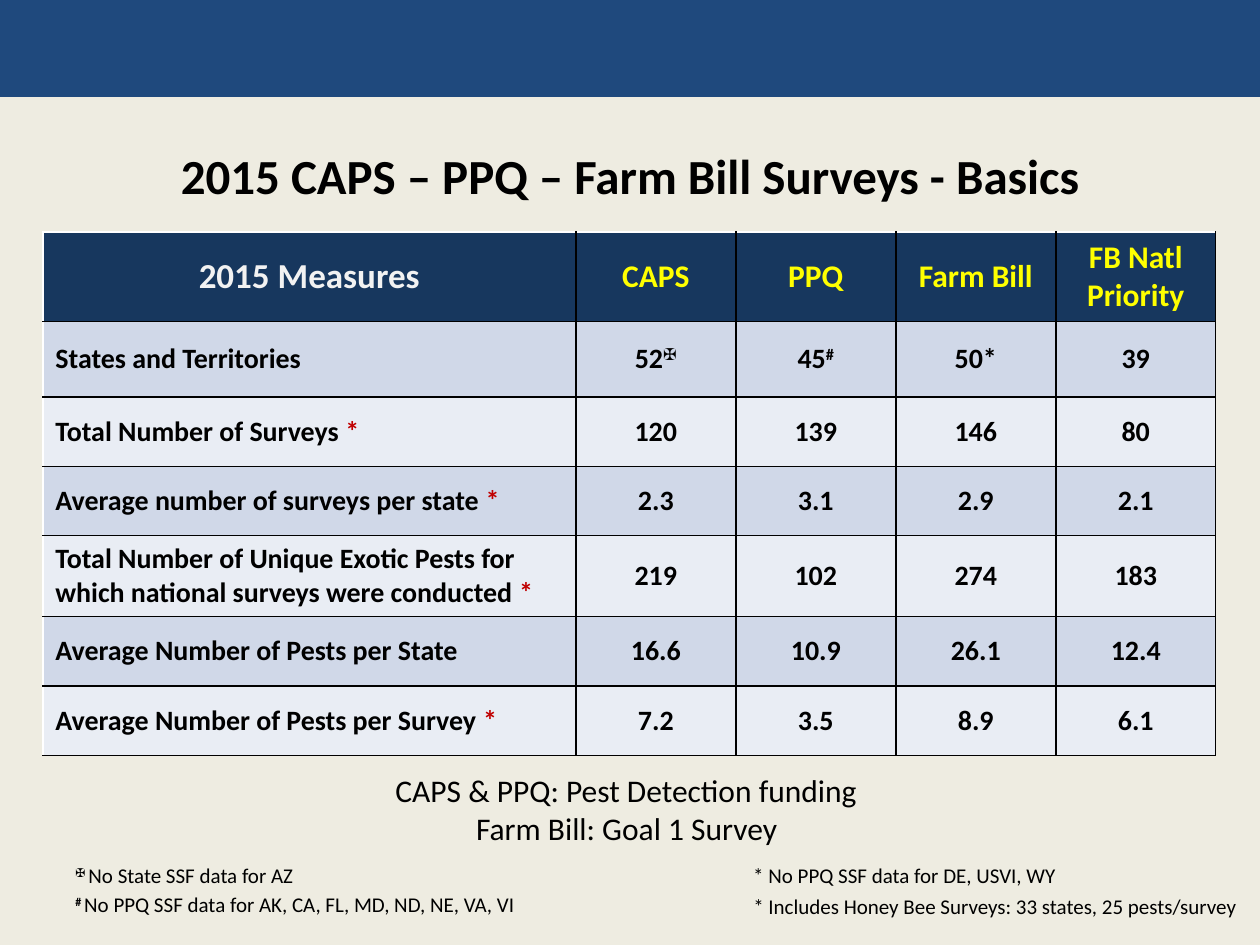
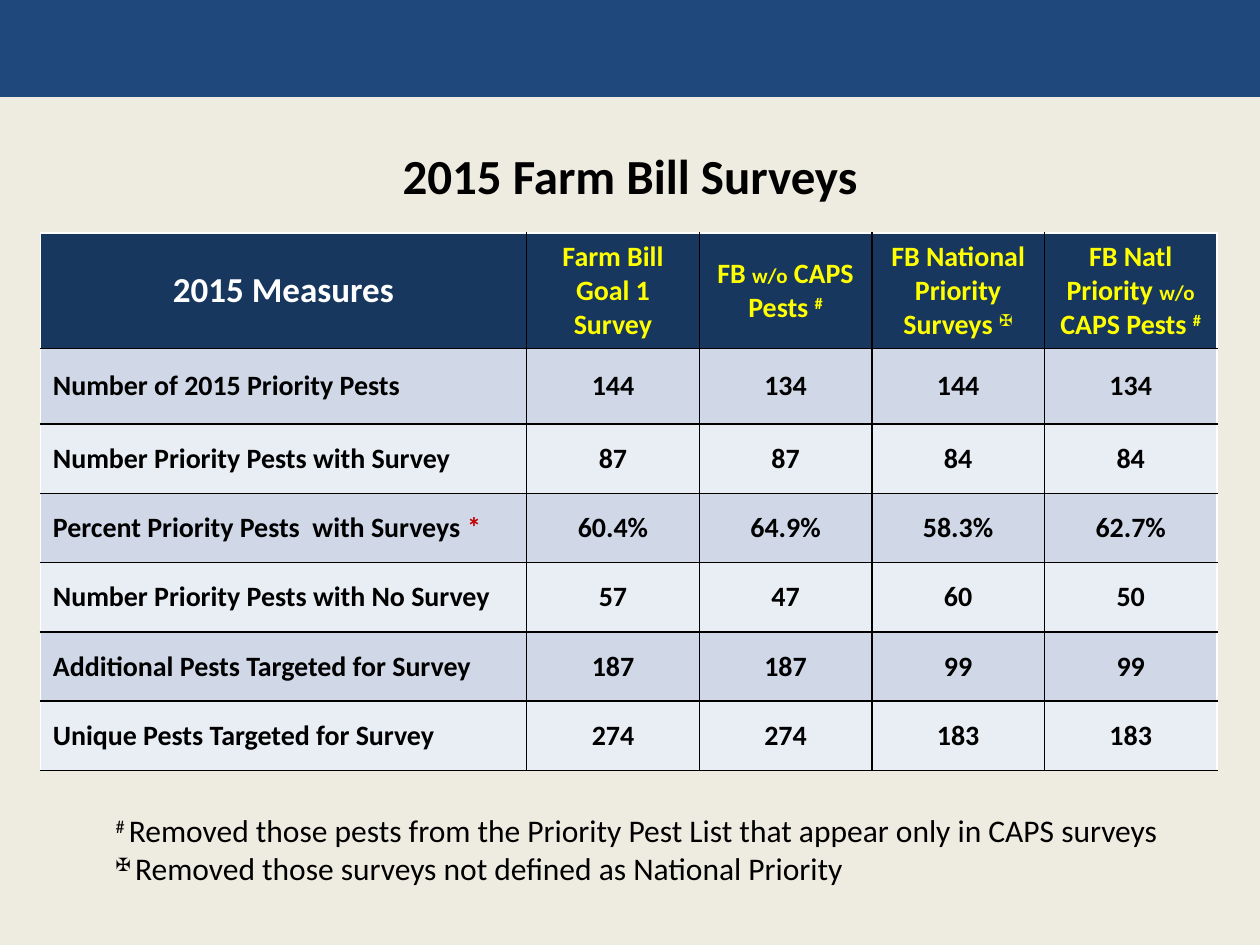
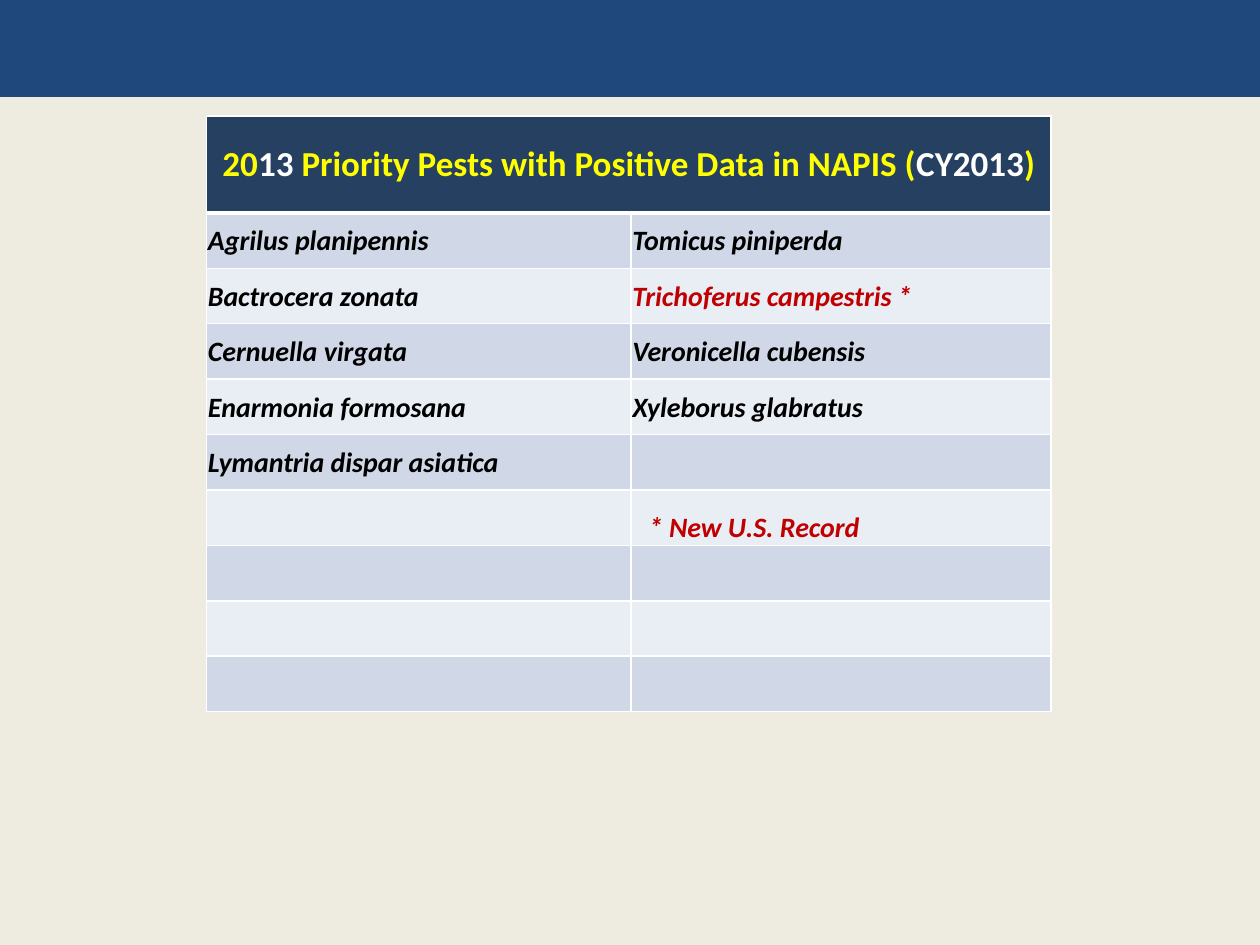
from typing import NamedTuple, Sequence

from lxml.etree import SubElement
from pptx import Presentation
from pptx.dml.color import RGBColor
from pptx.enum.shapes import MSO_SHAPE
from pptx.enum.text import MSO_ANCHOR, MSO_AUTO_SIZE, PP_ALIGN
from pptx.oxml.ns import qn
from pptx.util import Inches, Pt

FONT = "Calibri"
CREAM, BAND_BLUE = "EEECE1", "1F497D"
NAVY, SLATE = "17375E", "254061"
ROW_FILLS = ("D0D8E8", "E9EDF4")
BLACK, WHITE, OFF_WHITE = "000000", "FFFFFF", "F2F2F2"
YELLOW, RED = "FFFF00", "C00000"


class Style(NamedTuple):
    size: float
    color: str = BLACK
    bold: bool = False
    italic: bool = False
    shadow: bool = False


class Run(NamedTuple):
    """Text whose unset fields fall back on the surrounding style."""
    text: str
    color: str = ""
    size: float = 0
    raised: bool = False
    bold: bool = False


class Edges(NamedTuple):
    left: str = BLACK
    right: str = BLACK
    top: str = BLACK
    bottom: str = BLACK
    bottom_width: float = 1


class Note(NamedTuple):
    left: float
    top: float
    width: float
    height: float
    lines: Sequence[Sequence[Run]]
    style: Style


class Measures(NamedTuple):
    left: float
    top: float
    label_width: float
    value_width: float
    header_height: float
    corner: Run
    right_edge: str
    header_size: float
    headers: Sequence[Sequence[Run]]
    rows: Sequence[tuple[Sequence[Run], Sequence[Sequence[Run]]]]


TITLE = Style(28, bold=True, shadow=True)
BODY = Style(16, bold=True)
SPECIES = Style(16, bold=True, italic=True)
FUNDING = Style(18, shadow=True)
FOOTNOTE = Style(12)
RED_STAR = Run("*", RED)
CROSS = Run("✠", raised=True)
HASH = Run("#", raised=True)
WITHOUT = Run("w/o", size=12)


def rgb(value: str) -> RGBColor:
    return RGBColor.from_string(value)


def plain(*texts: str) -> list[list[Run]]:
    """One single-run line for each text."""
    return [[Run(text)] for text in texts]


def add_text_shadow(properties) -> None:
    effects = SubElement(properties, qn("a:effectLst"))
    shadow = SubElement(effects, qn("a:outerShdw"), blurRad=str(Pt(3)),
                        dist=str(Pt(3)), dir="2700000", algn="tl")
    color = SubElement(shadow, qn("a:srgbClr"), val=BLACK)
    SubElement(color, qn("a:alpha"), val="43000")


def write(paragraph, runs: Sequence[Run], style: Style) -> None:
    for part in runs:
        run = paragraph.add_run()
        run.text = part.text
        font = run.font
        font.size = Pt(part.size or style.size)
        font.bold = part.bold or style.bold
        font.italic = style.italic
        font.color.rgb = rgb(part.color or style.color)
        properties = font._element
        if part.raised:
            properties.set("baseline", "30000")
        if style.shadow:
            add_text_shadow(properties)
        font.name = FONT


def format_cell(cell, fill: str, edges: Edges) -> None:
    properties = cell._tc.get_or_add_tcPr()
    for tag, color, width in (("lnL", edges.left, 1), ("lnR", edges.right, 1),
                              ("lnT", edges.top, 1),
                              ("lnB", edges.bottom, edges.bottom_width)):
        line = SubElement(properties, qn(f"a:{tag}"), w=str(Pt(width)))
        SubElement(SubElement(line, qn("a:solidFill")), qn("a:srgbClr"), val=color)
    cell.fill.solid()
    cell.fill.fore_color.rgb = rgb(fill)
    cell.vertical_anchor = MSO_ANCHOR.MIDDLE


def set_margins(cell, margin: float, bottom: float = 0) -> None:
    cell.margin_left = cell.margin_right = cell.margin_top = Inches(margin)
    cell.margin_bottom = Inches(bottom)


def add_grid(slide, left: float, top: float,
             widths: Sequence[float], heights: Sequence[float]):
    table = slide.shapes.add_table(
        len(heights), len(widths), Inches(left), Inches(top),
        Inches(sum(widths)), Inches(sum(heights))).table
    table.first_row = table.horz_banding = False
    for column, width in zip(table.columns, widths):
        column.width = Inches(width)
    for row, height in zip(table.rows, heights):
        row.height = Inches(height)
    return table


def add_measures(slide, spec: Measures) -> None:
    heights = [spec.header_height, 0.6] + [0.55] * (len(spec.rows) - 1)
    widths = [spec.label_width] + [spec.value_width] * len(spec.headers)
    table = add_grid(slide, spec.left, spec.top, widths, heights)
    header_style = Style(spec.header_size, YELLOW, bold=True)
    lines = [([spec.corner], spec.headers), *spec.rows]
    for r, (label, values) in enumerate(lines):
        for c, runs in enumerate([label, *values]):
            cell = table.cell(r, c)
            edges = Edges(left=BLACK if c else WHITE,
                          right=spec.right_edge if c == len(values) else BLACK,
                          top=BLACK if r else WHITE)
            format_cell(cell, ROW_FILLS[(r - 1) % 2] if r else NAVY, edges)
            if r and c:
                set_margins(cell, 0)
            paragraph = cell.text_frame.paragraphs[0]
            if c or not r:
                paragraph.alignment = PP_ALIGN.CENTER
            write(paragraph, runs, BODY if r else header_style)


def add_note(slide, note: Note) -> None:
    frame = slide.shapes.add_textbox(Inches(note.left), Inches(note.top),
                                     Inches(note.width), Inches(note.height)).text_frame
    frame.word_wrap = False
    frame.auto_size = MSO_AUTO_SIZE.SHAPE_TO_FIT_TEXT
    for i, runs in enumerate(note.lines):
        paragraph = frame.add_paragraph() if i else frame.paragraphs[0]
        write(paragraph, runs, note.style)


def set_title(slide, text: str) -> None:
    title = slide.shapes.title
    title.left, title.top = Inches(0.5), Inches(1)
    title.width, title.height = Inches(9), Inches(0.78)
    title.text_frame.vertical_anchor = MSO_ANCHOR.MIDDLE
    paragraph = title.text_frame.paragraphs[0]
    paragraph.alignment = PP_ALIGN.CENTER
    write(paragraph, [Run(text)], TITLE)


def style_master(prs, slide) -> None:
    """Give the master its background and top band, drawn by way of a slide."""
    background = prs.slide_master.background.fill
    background.solid()
    background.fore_color.rgb = rgb(CREAM)
    band = slide.shapes.add_shape(MSO_SHAPE.RECTANGLE, 0, 0,
                                  prs.slide_width, Inches(0.77))
    band.shadow.inherit = False
    band.fill.solid()
    band.fill.fore_color.rgb = rgb(BAND_BLUE)
    band.line.fill.background()
    prs.slide_master.shapes.element.insert(2, band.element)


SURVEY_BASICS = Measures(
    0.34, 1.84, 4.23, 1.27, 0.7, Run("2015 Measures", OFF_WHITE, 20), BLACK, 18,
    plain("CAPS", "PPQ", "Farm Bill", "FB Natl Priority"),
    [
        ([Run("States and Territories")],
         [[Run("52"), CROSS], [Run("45"), HASH], *plain("50*", "39")]),
        ([Run("Total Number of Surveys "), RED_STAR],
         plain("120", "139", "146", "80")),
        ([Run("Average number of surveys per state "), RED_STAR],
         plain("2.3", "3.1", "2.9", "2.1")),
        ([Run("Total Number of Unique Exotic Pests for which national surveys "
              "were conducted "), RED_STAR],
         plain("219", "102", "274", "183")),
        ([Run("Average Number of Pests per State")],
         plain("16.6", "10.9", "26.1", "12.4")),
        ([Run("Average Number of Pests per Survey "), RED_STAR],
         plain("7.2", "3.5", "8.9", "6.1")),
    ])

BASICS_NOTES = [
    Note(3.04, 6.07, 3.91, 0.4, plain("CAPS & PPQ: Pest Detection funding"), FUNDING),
    Note(3.68, 6.37, 2.62, 0.4, plain("Farm Bill: Goal 1 Survey"), FUNDING),
    Note(0.5, 6.8, 1.95, 0.3, [[Run("✠ ", raised=True, bold=True),
                                Run("No State SSF data for AZ")]], FOOTNOTE),
    Note(0.5, 7.03, 3.74, 0.3,
         [[Run("# ", raised=True, bold=True),
           Run("No PPQ SSF data for AK, CA, FL, MD, ND, NE, VA, VI")]], FOOTNOTE),
    Note(5.88, 6.8, 2.63, 0.3, plain("* No PPQ SSF data for DE, USVI, WY"), FOOTNOTE),
    Note(5.88, 7.04, 4.12, 0.3,
         plain("* Includes Honey Bee Surveys: 33 states, 25 pests/survey"), FOOTNOTE),
]

FARM_BILL = Measures(
    0.32, 1.85, 3.86, 1.37, 0.5, Run("2015 Measures", WHITE, 20), WHITE, 16,
    [
        [Run("Farm Bill Goal 1 Survey")],
        [Run("FB "), WITHOUT, Run(" CAPS Pests "), HASH],
        [Run("FB National Priority Surveys "), CROSS],
        [Run("FB Natl Priority "), WITHOUT, Run(" CAPS Pests "), HASH],
    ],
    [
        ([Run("Number of 2015 Priority Pests")], plain("144", "134", "144", "134")),
        ([Run("Number Priority Pests with Survey")], plain("87", "87", "84", "84")),
        ([Run("Percent Priority Pests  with Surveys "), RED_STAR],
         plain("60.4%", "64.9%", "58.3%", "62.7%")),
        ([Run("Number Priority Pests with No Survey")], plain("57", "47", "60", "50")),
        ([Run("Additional Pests Targeted for Survey")], plain("187", "187", "99", "99")),
        ([Run("Unique Pests Targeted for Survey")], plain("274", "274", "183", "183")),
    ])

FARM_BILL_NOTE = Note(
    0.82, 6.39, 8.5, 0.71,
    [
        [Run("# ", raised=True),
         Run("Removed those pests from the Priority Pest List that appear only "
             "in CAPS surveys")],
        [Run("✠ ", raised=True),
         Run("Removed those surveys not defined as National Priority")],
    ], Style(18))

PESTS_HEADING = [
    Run("20"), Run("13", WHITE),
    Run(" Priority Pests with Positive Data in NAPIS ("),
    Run("CY2013", WHITE), Run(")"),
]
NEW_RECORD = "* New U.S. Record"
POSITIVE_PESTS = [
    ("Agrilus planipennis", "Tomicus piniperda"),
    ("Bactrocera zonata", "Trichoferus campestris *"),
    ("Cernuella virgata", "Veronicella cubensis"),
    ("Enarmonia formosana", "Xyleborus glabratus"),
    ("Lymantria dispar asiatica", ""),
    ("", NEW_RECORD),
    ("", ""),
    ("", ""),
    ("", ""),
]


def add_positive_pests(slide) -> None:
    table = add_grid(slide, 1.64, 0.92, (3.37, 3.33),
                     [0.77] + [0.44] * len(POSITIVE_PESTS))
    for cell in table.rows[0].cells:
        format_cell(cell, SLATE, Edges(WHITE, WHITE, WHITE, WHITE, 3))
    heading = table.cell(0, 0)
    heading.merge(table.cell(0, 1))
    paragraph = heading.text_frame.paragraphs[0]
    paragraph.alignment = PP_ALIGN.CENTER
    write(paragraph, PESTS_HEADING, Style(20, YELLOW, bold=True))

    for r, pests in enumerate(POSITIVE_PESTS, start=1):
        for c, pest in enumerate(pests):
            cell = table.cell(r, c)
            format_cell(cell, ROW_FILLS[(r - 1) % 2],
                        Edges(WHITE, WHITE, WHITE, WHITE, 1))
            if not pest:
                continue
            set_margins(cell, 0.01)
            paragraph = cell.text_frame.paragraphs[0]
            if pest == NEW_RECORD:
                cell.vertical_anchor = MSO_ANCHOR.BOTTOM
                paragraph._p.get_or_add_pPr().set("marL", str(Inches(0.13)))
            write(paragraph, [Run(pest, RED if "*" in pest else BLACK)], SPECIES)


def main() -> None:
    prs = Presentation()
    prs.slide_width, prs.slide_height = Inches(10), Inches(7.5)
    title_only, blank = prs.slide_layouts[5], prs.slide_layouts[6]

    basics = prs.slides.add_slide(title_only)
    style_master(prs, basics)
    set_title(basics, "2015 CAPS – PPQ – Farm Bill Surveys - Basics")
    add_measures(basics, SURVEY_BASICS)
    for note in BASICS_NOTES:
        add_note(basics, note)

    farm_bill = prs.slides.add_slide(title_only)
    set_title(farm_bill, "2015 Farm Bill Surveys")
    add_measures(farm_bill, FARM_BILL)
    add_note(farm_bill, FARM_BILL_NOTE)

    add_positive_pests(prs.slides.add_slide(blank))
    prs.save("out.pptx")


if __name__ == "__main__":
    main()
